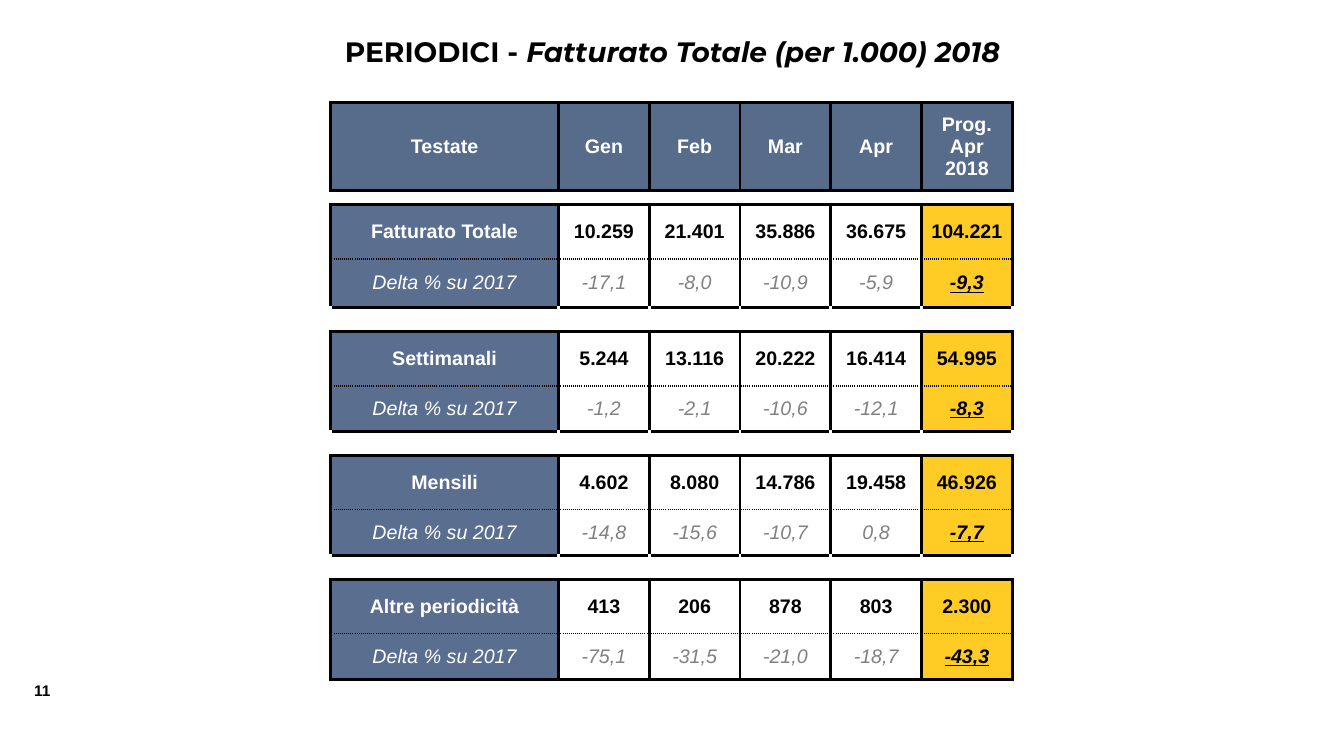
from dataclasses import dataclass

from lxml.etree import SubElement
from pptx import Presentation
from pptx.dml.color import RGBColor
from pptx.enum.text import MSO_ANCHOR as Anchor, PP_ALIGN as Align
from pptx.oxml.ns import qn
from pptx.util import Inches, Pt

TITLE = [("PERIODICI - ", False), ("Fatturato Totale (per 1.000) 2018", True)]
PAGE_NUMBER = "11"
HEADER = ["Testate", "Gen", "Feb", "Mar", "Apr", "Prog.\vApr\v2018"]
DELTA_LABEL = "Delta % su 2017"
GROUPS = [
    ("Fatturato Totale",
     ["10.259", "21.401", "35.886", "36.675", "104.221"],
     ["-17,1", "-8,0", "-10,9", "-5,9", "-9,3"]),
    ("Settimanali",
     ["5.244", "13.116", "20.222", "16.414", "54.995"],
     ["-1,2", "-2,1", "-10,6", "-12,1", "-8,3"]),
    ("Mensili",
     ["4.602", "8.080", "14.786", "19.458", "46.926"],
     ["-14,8", "-15,6", "-10,7", "0,8", "-7,7"]),
    ("Altre periodicità",
     ["413", "206", "878", "803", "2.300"],
     ["-75,1", "-31,5", "-21,0", "-18,7", "-43,3"]),
]


@dataclass(frozen=True)
class Theme:
    title_font: str = "Montserrat"
    body_font: str = "Arial"
    title_size: int = 20
    table_size: int = 14
    number_size: int = 11
    spacer_size: int = 4
    black: str = "000000"
    white: str = "FFFFFF"
    gray: str = "808080"
    header: str = "576B8A"
    label: str = "5A6F90"
    total: str = "FFCB25"


THEME = Theme()
SOLID = (THEME.black, 2.25, "solid")
DOTTED = (THEME.black, 1, "sysDot")
BLANK = (THEME.white, 2.25, "solid")

# Borders in the order left, right, top, bottom
BORDERS = {
    "header": (SOLID, SOLID, SOLID, SOLID),
    "value": (SOLID, SOLID, SOLID, DOTTED),
    "delta": (SOLID, SOLID, DOTTED, SOLID),
    "first gap": (None, None, SOLID, SOLID),
    "gap": (BLANK, BLANK, SOLID, SOLID),
}
LABEL_WIDTH, MONTH_WIDTH = 2.26, 0.9
HEADER_HEIGHT, VALUE_HEIGHT = 0.87, 0.54
FIRST_GAP, GAP = 0.14, 0.24
FIRST_DELTA, DELTA = 0.48, 0.45


def style_font(font, size, color, name=THEME.body_font, bold=True, italic=False):
    font.name, font.size = name, Pt(size)
    font.bold, font.italic = bold, italic
    font.color.rgb = RGBColor.from_string(color)


def set_borders(cell, borders):
    props = cell._tc.get_or_add_tcPr()
    for side, border in zip("LRTB", borders):
        line = SubElement(props, qn(f"a:ln{side}"))
        if border is None:
            SubElement(line, qn("a:noFill"))
            continue
        color, width, dash = border
        line.set("w", str(Pt(width)))
        fill = SubElement(line, qn("a:solidFill"))
        SubElement(fill, qn("a:srgbClr"), val=color)
        SubElement(line, qn("a:prstDash"), val=dash)


def cell_look(kind, column):
    """Return fill, text colour, bold, italic and underline."""
    is_delta = kind == "delta"
    if kind == "header":
        return THEME.header, THEME.white, True, False, False
    if "gap" in kind:
        return THEME.white, THEME.black, False, False, False
    if column == 0:
        return THEME.label, THEME.white, not is_delta, is_delta, False
    if column == len(HEADER) - 1:
        return THEME.total, THEME.black, True, is_delta, is_delta
    color = THEME.gray if is_delta else THEME.black
    return THEME.white, color, not is_delta, is_delta, False


def fill_cell(cell, kind, column, text):
    fill, color, bold, italic, underline = cell_look(kind, column)
    set_borders(cell, BORDERS[kind])
    cell.fill.solid()
    cell.fill.fore_color.rgb = RGBColor.from_string(fill)
    cell.vertical_anchor = Anchor.MIDDLE
    if kind != "header" and (column or not text):
        cell.margin_left = cell.margin_right = 0
        cell.margin_top = cell.margin_bottom = 0
    para = cell.text_frame.paragraphs[0]
    para.alignment = Align.CENTER
    if not text:
        SubElement(para._p, qn("a:endParaRPr"), sz=str(THEME.spacer_size * 100))
        return
    para.text = text
    style_font(para.font, THEME.table_size, color, bold=bold, italic=italic)
    if underline:
        para.font.underline = True


def table_rows():
    """Return kind, height and texts of each row."""
    rows = [("header", HEADER_HEIGHT, HEADER)]
    empty = [""] * len(HEADER)
    for index, (name, values, deltas) in enumerate(GROUPS):
        first = index == 0
        rows += [
            ("first gap" if first else "gap", FIRST_GAP if first else GAP, empty),
            ("value", VALUE_HEIGHT, [name, *values]),
            ("delta", FIRST_DELTA if first else DELTA, [DELTA_LABEL, *deltas]),
        ]
    return rows


def add_revenue_table(page):
    rows = table_rows()
    widths = [LABEL_WIDTH] + [MONTH_WIDTH] * (len(HEADER) - 1)
    table = page.shapes.add_table(
        len(rows), len(widths), Inches(3.28), Inches(1.02),
        Inches(sum(widths)), Inches(sum(row[1] for row in rows))).table
    table.first_row = table.horz_banding = False
    for column, width in zip(table.columns, widths):
        column.width = Inches(width)
    for row, (kind, height, texts) in zip(table.rows, rows):
        row.height = Inches(height)
        for column, (cell, text) in enumerate(zip(row.cells, texts)):
            fill_cell(cell, kind, column, text)


def add_text_box(page, left, top, width, height, wrap):
    box = page.shapes.add_textbox(*map(Inches, (left, top, width, height)))
    box.text_frame.word_wrap = wrap
    return box.text_frame.paragraphs[0]


def main():
    deck = Presentation()
    deck.slide_width, deck.slide_height = Inches(13.33), Inches(7.5)
    page = deck.slides.add_slide(deck.slide_layouts[6])

    number = add_text_box(page, 0.24, 6.71, 0.42, 0.29, wrap=False)
    number.text = PAGE_NUMBER
    style_font(number.font, THEME.number_size, THEME.black)

    title = add_text_box(page, 1.67, 0.29, 10, 0.44, wrap=True)
    title.alignment = Align.CENTER
    for text, italic in TITLE:
        span = title.add_run()
        span.text = text
        style_font(span.font, THEME.title_size, THEME.black,
                   THEME.title_font, italic=italic)

    add_revenue_table(page)
    deck.save("out.pptx")


if __name__ == "__main__":
    main()
